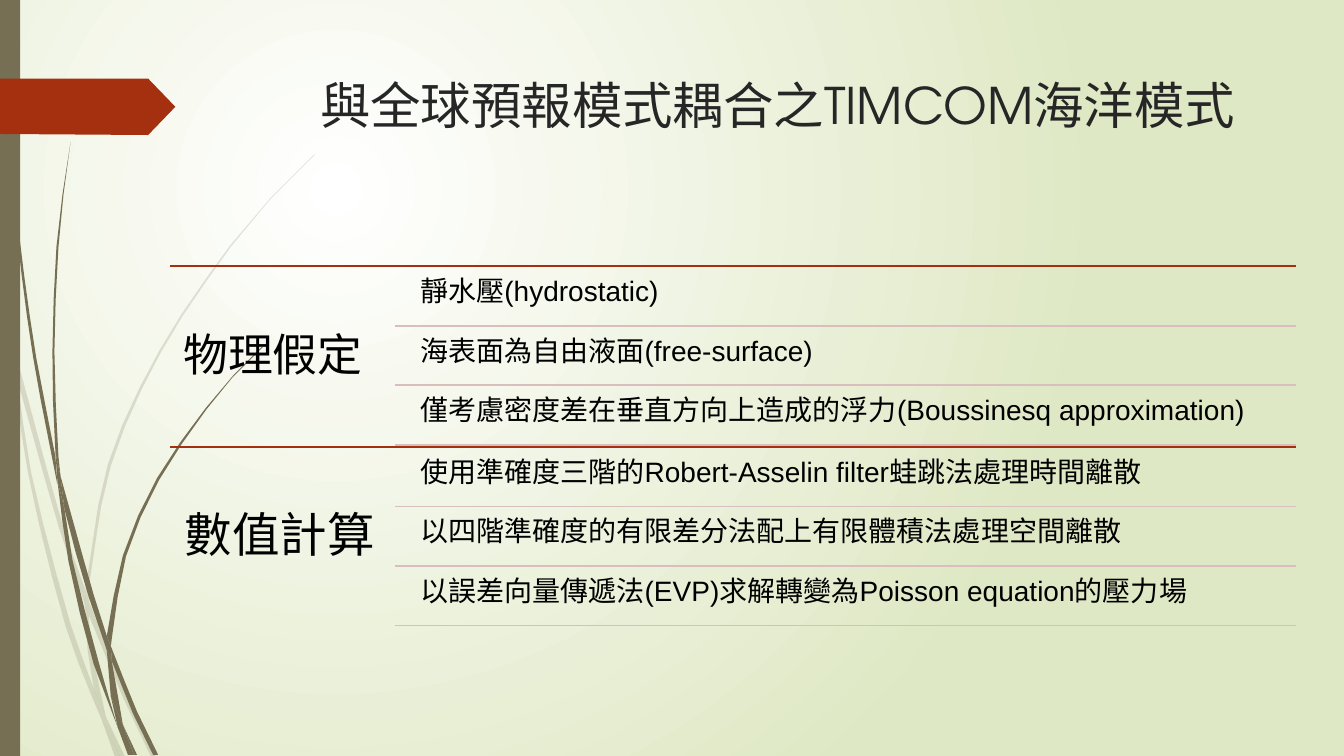
from lxml.etree import SubElement
from pptx import Presentation
from pptx.dml.color import RGBColor
from pptx.enum.shapes import MSO_CONNECTOR as Link, MSO_SHAPE as Shape
from pptx.enum.text import MSO_ANCHOR as Anchor, PP_ALIGN as Align
from pptx.oxml.ns import qn
from pptx.util import Cm, Pt

HEAD = "TeX Gyre Adventor"
BODY = "Arial"
OLIVE, RUST, ROSE = "766F54", "A53010", "D8BEBD"
BLACK, DARK = "000000", "262626"
FINE = 100

PALE = [
    ((0, 282, 9, 322, 11, 350), (0, 299, 10, 344, 11, 350)),
    ((14, 345, 62, 520, 85, 586), (17, 376, 58, 522, 84, 599)),
    ((88, 596, 127, 692, 155, 751), (88, 610, 123, 694, 150, 751)),
    ((105, 711, 124, 751), (105, 711, 119, 751)),
    ((11, 350, 28, 470, 65, 621, 92, 693, 101, 714),
     (11, 350, 17, 376, 31, 469, 70, 619, 93, 683, 101, 714)),
    ((84, 599, 87, 646, 93, 683, 105, 711), (84, 599, 88, 610, 91, 646, 105, 711)),
    ((312, 153, 268, 197, 228, 244, 158, 348, 107, 461, 85, 584),
     (312, 154, 268, 198, 229, 245, 160, 349, 110, 462, 88, 584, 88, 596)),
    ((101, 714, 114, 751), (101, 714, 119, 751)),
    ((85, 586, 84, 599), (88, 596, 88, 610)),
    ((93, 683, 101, 714, 119, 751), (93, 683, 105, 711, 119, 751)),
]
DEEP = [
    ((3, 0, 7, 110, 17, 233, 33, 355, 57, 481),
     (4, 0, 8, 109, 19, 232, 36, 355, 55, 453, 57, 481)),
    ((60, 472, 64, 505, 88, 592, 106, 645), (60, 472, 93, 590, 106, 631, 106, 645)),
    ((110, 641, 111, 656, 132, 708, 152, 749), (110, 641, 136, 706, 157, 749)),
    ((57, 477, 68, 557, 93, 659, 117, 722),
     (57, 477, 64, 505, 72, 556, 98, 657, 117, 722)),
    ((70, 141, 62, 193, 56, 245, 52, 349, 55, 449, 60, 472),
     (70, 141, 63, 193, 58, 245, 54, 349, 58, 453, 60, 472)),
    ((122, 719, 133, 749), (122, 719, 136, 749)),
    ((55, 449, 57, 477, 64, 505), (55, 449, 60, 472, 64, 505)),
    ((260, 344, 231, 373, 204, 405, 156, 474, 122, 551, 106, 631),
     (261, 344, 231, 374, 205, 406, 158, 476, 125, 552, 111, 633, 110, 641)),
    ((117, 722, 127, 749), (117, 722, 131, 749)),
    ((106, 645, 110, 691, 122, 719), (106, 645, 111, 656, 122, 719)),
    ((106, 631, 106, 645), (110, 641, 111, 656)),
    ((110, 691, 117, 722, 130, 749), (110, 691, 122, 719, 133, 749)),
]
ARROW = (0, 78, 147, 78, 174, 106, 147, 134, 0, 133)

PARTS = [
    ("物理假定", 32, 0.33, [
        ("靜水壓(hydrostatic)", BODY),
        ("海表面為自由液面(free-surface)", BODY),
        ("僅考慮密度差在垂直方向上造成的浮力(Boussinesq approximation)", BODY)]),
    ("數值計算", 34, 0.36, [
        ("使用準確度三階的Robert-Asselin filter蛙跳法處理時間離散", BODY),
        ("以四階準確度的有限差分法配上有限體積法處理空間離散", HEAD),
        ("以誤差向量傳遞法(EVP)求解轉變為Poisson equation的壓力場", BODY)]),
]


def color(code):
    return RGBColor.from_string(code)


def points(flat):
    return [complex(x, y) for x, y in zip(flat[::2], flat[1::2])]


def smooth(flat):
    knots = points(flat)
    if len(knots) == 2:
        return knots
    spans = [b - a for a, b in zip([knots[0]] + knots, knots[1:] + knots[-1:])]
    ways = [s / abs(s) for s in spans]
    trail = [knots[0]]
    for a, b, u, v in zip(knots, knots[1:], ways, ways[1:]):
        reach = abs(b - a) / 3
        steps = max(1, round(reach / 15))
        c, d = a + u * reach, b - v * reach
        for t in (n / steps for n in range(1, steps + 1)):
            s = 1 - t
            trail.append(a * s**3 + 3 * c * s * s * t + 3 * d * s * t * t + b * t**3)
    return trail


class Deck:
    def __init__(self):
        self.show = Presentation()
        self.show.slide_width, self.show.slide_height = Cm(33.87), Cm(19.05)
        self.slide = self.show.slides.add_slide(self.show.slide_layouts[6])
        self.shapes = self.slide.shapes

    def glow(self, inner, outer):
        fill = self.slide.background.fill
        fill.gradient()
        for stop, code, place in zip(fill.gradient_stops, (inner, outer), (0, 1)):
            stop.color.rgb = color(code)
            stop.position = place
        grad = self.slide.background._cSld.find(".//" + qn("a:gradFill"))
        grad.remove(grad.find(qn("a:lin")))
        ring = SubElement(grad, qn("a:path"), path="circle")
        SubElement(ring, qn("a:fillToRect"), l="50000", t="50000", r="100000", b="100000")

    def paint(self, shape, code, alpha=None):
        shape.shadow.inherit = False
        shape.fill.solid()
        shape.fill.fore_color.rgb = color(code)
        shape.line.fill.background()
        if alpha:
            tint = shape._element.spPr.find(".//" + qn("a:srgbClr"))
            SubElement(tint, qn("a:alpha"), val=str(alpha * 1000))

    def bar(self, x, y, w, h, code):
        self.paint(self.shapes.add_shape(Shape.RECTANGLE, Cm(x), Cm(y), Cm(w), Cm(h)), code)

    def form(self, trail, code, alpha=None):
        spots = [(p.real * FINE, p.imag * FINE) for p in trail]
        pen = self.shapes.build_freeform(*spots[0], scale=Cm(0.0254) / FINE)
        pen.add_line_segments(spots[1:], close=True)
        self.paint(pen.convert_to_shape(), code, alpha)

    def blade(self, left, right, alpha=None):
        self.form(smooth(left) + smooth(right)[::-1], OLIVE, alpha)

    def rule(self, x, end, y, code):
        line = self.shapes.add_connector(Link.STRAIGHT, Cm(x), Cm(y), Cm(end), Cm(y))
        line.line.color.rgb = color(code)
        line.line.width = Pt(1.25)
        SubElement(line._element.spPr, qn("a:effectLst"))

    def text(self, x, y, w, h, words, size, font, code=BLACK, pad=0.2,
             anchor=Anchor.TOP, align=Align.LEFT, space=0.9):
        frame = self.shapes.add_textbox(Cm(x), Cm(y), Cm(w), Cm(h)).text_frame
        frame.word_wrap = True
        frame.vertical_anchor = anchor
        frame.margin_left = frame.margin_right = Cm(pad)
        frame.margin_top = frame.margin_bottom = Cm(pad)
        para = frame.paragraphs[0]
        para.alignment, para.line_spacing = align, space
        run = para.add_run()
        run.text = words
        run.font.size, run.font.name = Pt(size), font
        run.font.color.rgb = color(code)


def main():
    deck = Deck()
    deck.glow("FFFFFF", "DFE8C4")
    for blades, alpha in ((PALE, 20), (DEEP, None)):
        for left, right in blades:
            deck.blade(left, right, alpha)
    deck.bar(0, 0, 0.51, 19.05, OLIVE)
    deck.form(points(ARROW), RUST)
    deck.text(7.21, 1.73, 24.77, 3.56, "與全球預報模式耦合之TIMCOM海洋模式", 36, HEAD,
              DARK, pad=0.13, align=Align.CENTER, space=1)

    start, mid, end = 4.29, 9.96, 32.66
    tall, pitch = 4.55, 1.5
    for i, (name, size, pad, rows) in enumerate(PARTS):
        top = 6.71 + i * tall
        deck.rule(start, end, top, RUST)
        deck.text(start, top, mid - start, tall, name, size, HEAD, pad=pad,
                  anchor=Anchor.MIDDLE)
        for j, (words, font) in enumerate(rows):
            y = top + j * pitch
            deck.text(10.39, y + 0.08, 22.25, 1.42, words, 20, font)
            deck.rule(mid, end, y + pitch, ROSE)
    deck.show.save("out.pptx")


if __name__ == "__main__":
    main()
